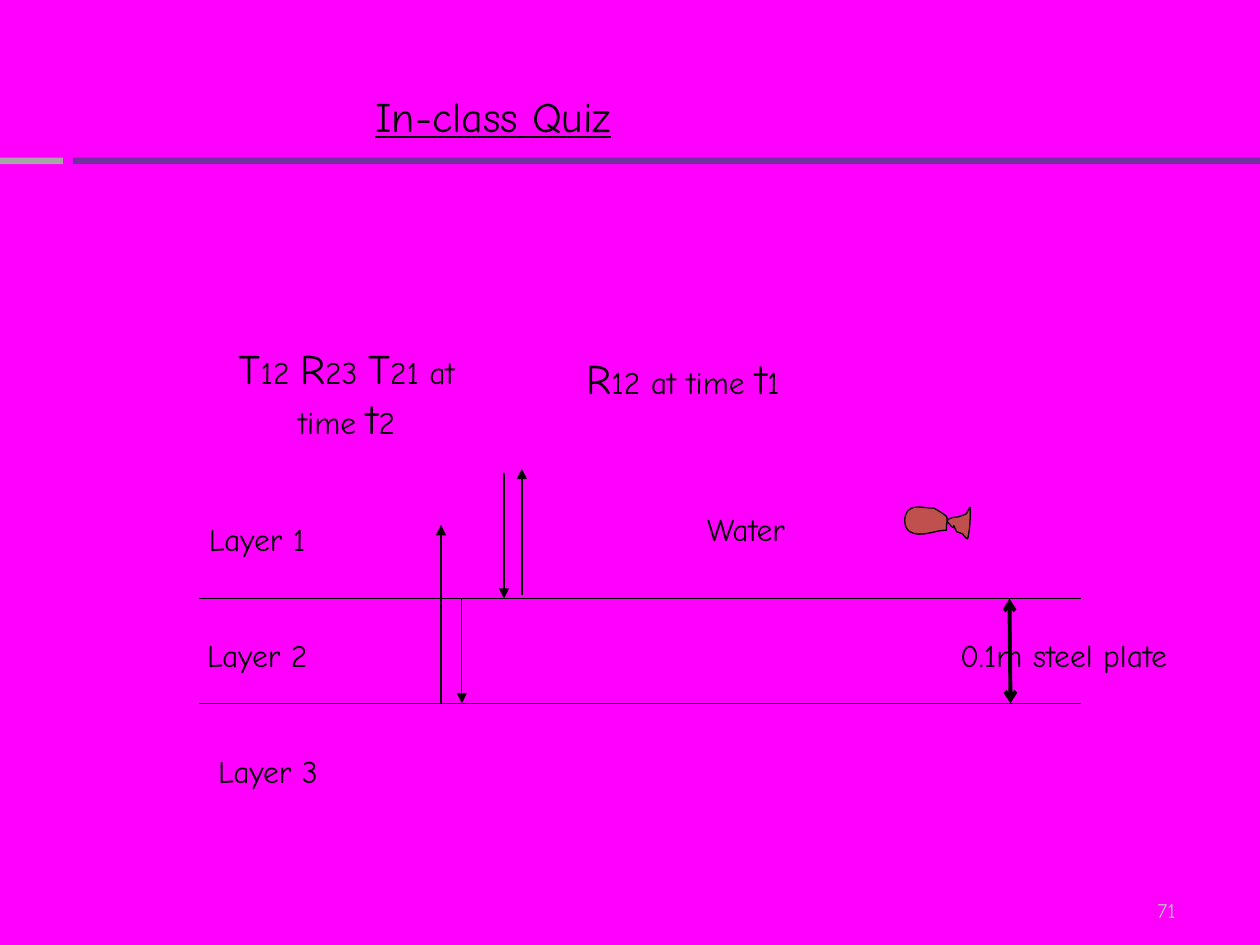
from lxml.etree import SubElement
from pptx import Presentation
from pptx.dml.color import RGBColor
from pptx.enum.shapes import MSO_CONNECTOR, MSO_SHAPE
from pptx.enum.text import MSO_ANCHOR, MSO_AUTO_SIZE, PP_ALIGN
from pptx.oxml.ns import qn
from pptx.util import Cm, Pt

COLOURS = {
    "background": "FF00FF",
    "ink": "000000",
    "rule": "7030A0",
    "rule_start": "A6A6A6",
    "page_number": "BFBFBF",
    "fish": "C0504D",
}
FONT = "Comic Neue"
SURFACE, BOTTOM = 12.07, 14.18  # heights of the two layer boundaries

FISH_START = (19.28, 10.72)
# Each row is one Bezier curve: two control points and the end point.
FISH_CURVES = [
    ((19.15, 10.41), (19.33, 10.82), (19.1, 10.52)),
    ((19.08, 10.49), (19.1, 10.44), (19.08, 10.41)),
    ((19.0, 10.34), (18.82, 10.24), (18.82, 10.24)),
    ((18.67, 10.26), (18.44, 10.16), (18.31, 10.29)),
    ((18.21, 10.39), (18.21, 10.64), (18.34, 10.72)),
    ((18.57, 10.85), (18.82, 10.69), (19.08, 10.69)),
    ((19.08, 10.62), (19.08, 10.54), (19.1, 10.49)),
    ((19.18, 10.41), (19.28, 10.44), (19.35, 10.41)),
    ((19.41, 10.39), (19.48, 10.36), (19.48, 10.36)),
    ((19.51, 10.31), (19.56, 10.19), (19.56, 10.24)),
    ((19.56, 10.44), (19.56, 10.64), (19.51, 10.85)),
    ((19.51, 10.9), (19.43, 10.8), (19.41, 10.77)),
    ((19.35, 10.74), (19.28, 10.72), (19.28, 10.72)),
]


def colour(name):
    return RGBColor.from_string(COLOURS[name])


def add_text(page, text, left, top, width, height, *, size=18, ink="ink", underline=None,
             align=PP_ALIGN.CENTER, anchor=MSO_ANCHOR.TOP, wrap=True):
    """Add a text box; text is a string or a list of (string, size) spans."""
    box = page.shapes.add_textbox(Cm(left), Cm(top), Cm(width), Cm(height))
    frame = box.text_frame
    frame.word_wrap = wrap
    frame.auto_size = MSO_AUTO_SIZE.SHAPE_TO_FIT_TEXT
    frame.vertical_anchor = anchor
    para = frame.paragraphs[0]
    para.alignment = align
    spans = [(text, size)] if isinstance(text, str) else text
    for words, span_size in spans:
        span = para.add_run()
        span.text = words
        span.font.name = FONT
        span.font.size = Pt(span_size)
        span.font.underline = underline
        span.font.color.rgb = colour(ink)


def add_bar(page, left, width, fill):
    bar = page.shapes.add_shape(MSO_SHAPE.RECTANGLE, Cm(left), Cm(3.18), Cm(width), Cm(0.13))
    bar.shadow.inherit = False
    bar.fill.solid()
    bar.fill.fore_color.rgb = colour(fill)
    bar.line.fill.background()


def add_line(page, start, end, *, weight=0.75, head=None, tail=None):
    """Add a line; head and tail name the arrowheads at start and end."""
    line = page.shapes.add_connector(MSO_CONNECTOR.STRAIGHT, *map(Cm, start + end))
    line.line.color.rgb = colour("ink")
    line.line.width = Pt(weight)
    outline = line.line._get_or_add_ln()
    for tag, kind in (("a:headEnd", head), ("a:tailEnd", tail)):
        if kind:
            SubElement(outline, qn(tag), type=kind)
    SubElement(line._element.spPr, qn("a:effectLst"))


def curve_points(start, first, second, end, steps=8):
    for step in range(1, steps + 1):
        t = step / steps
        weights = ((1 - t) ** 3, 3 * t * (1 - t) ** 2, 3 * t * t * (1 - t), t ** 3)
        yield tuple(
            Cm(sum(weight * value for weight, value in zip(weights, values)))
            for values in zip(start, first, second, end)
        )


def add_fish(page):
    points, start = [], FISH_START
    for curve in FISH_CURVES:
        points.extend(curve_points(start, *curve))
        start = curve[-1]
    builder = page.shapes.build_freeform(*map(Cm, FISH_START))
    builder.add_line_segments(points, close=True)
    fish = builder.convert_to_shape()
    fish.shadow.inherit = False
    fish.fill.solid()
    fish.fill.fore_color.rgb = colour("fish")
    fish.line.color.rgb = colour("ink")
    fish.line.width = Pt(0.75)


def add_frame(page):
    page.background.fill.solid()
    page.background.fill.fore_color.rgb = colour("background")
    add_text(page, "71", 18.21, 17.7, 5.74, 1.02, size=12, ink="page_number",
             align=PP_ALIGN.RIGHT, anchor=MSO_ANCHOR.BOTTOM)
    add_bar(page, 1.47, 23.93, "rule")
    add_bar(page, 0, 1.27, "rule_start")
    add_text(page, "In-class Quiz", 4.23, 1.69, 11.43, 1.27, size=24, underline=True)


def add_layers(page):
    for height in (SURFACE, BOTTOM):
        add_line(page, (4.02, height), (21.8, height))
    for text, left, top in (("Layer 1", 2.96, 10.36), ("Layer 2", 2.96, 12.7),
                            ("Layer 3", 3.18, 15.03)):
        add_text(page, text, left, top, 4.45, 1.02)
    add_text(page, "Water", 11.23, 10.16, 7.62, 1.02)
    add_fish(page)


def add_rays(page):
    for x, start, end in ((10.16, 9.53, SURFACE), (9.31, SURFACE, BOTTOM),
                          (8.89, BOTTOM, 10.58), (10.52, 11.99, 9.45)):
        add_line(page, (x, start), (x, end), tail="triangle")
    add_text(page, [("R", 24), ("12 at time ", 18), ("t", 24), ("1", 18)],
             11.23, 6.99, 5.08, 1.27)
    add_text(page, [("T", 24), ("12 ", 18), ("R", 24), ("23 ", 18), ("T", 24),
                    ("21 at time ", 18), ("t", 24), ("2", 18)],
             4.45, 6.77, 5.08, 2.31)


def main():
    deck = Presentation()
    deck.slide_width, deck.slide_height = Cm(25.4), Cm(19.05)
    page = deck.slides.add_slide(deck.slide_layouts[6])
    add_frame(page)
    add_layers(page)
    add_rays(page)
    add_line(page, (20.35, SURFACE), (20.37, BOTTOM), weight=2.25, head="arrow", tail="arrow")
    add_text(page, "0.1m steel plate", 18.85, 12.7, 5.18, 1.02, wrap=False)
    deck.save("out.pptx")


if __name__ == "__main__":
    main()
